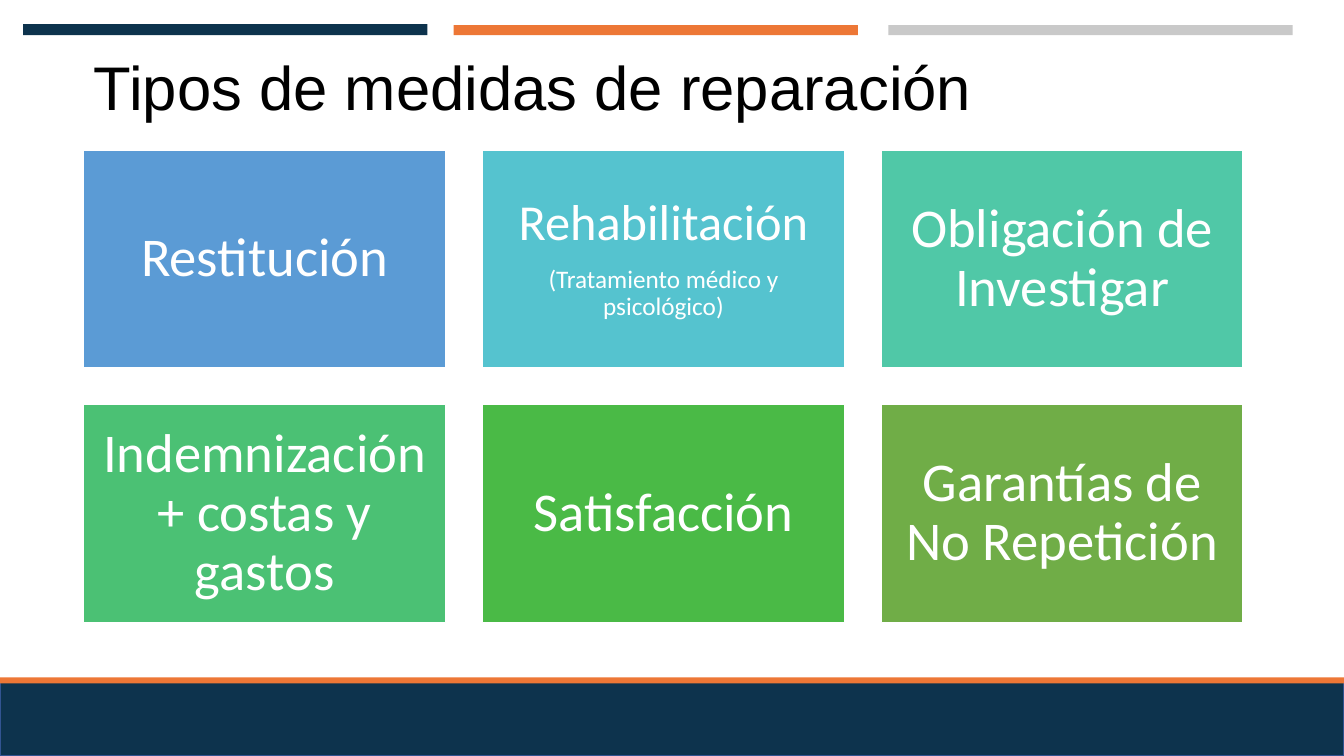
from pptx import Presentation
from pptx.dml.color import RGBColor
from pptx.enum.shapes import MSO_SHAPE
from pptx.enum.text import MSO_ANCHOR, MSO_AUTO_SIZE, PP_ALIGN
from pptx.util import Inches, Pt

RECTANGLE = MSO_SHAPE.RECTANGLE
MIDDLE = MSO_ANCHOR.MIDDLE
NO_AUTOFIT = MSO_AUTO_SIZE.NONE
LEFT, CENTER = PP_ALIGN.LEFT, PP_ALIGN.CENTER

BLACK = RGBColor(0x00, 0x00, 0x00)
WHITE = RGBColor(0xFF, 0xFF, 0xFF)
NAVY = RGBColor(0x0D, 0x33, 0x4D)
ORANGE = RGBColor(0xED, 0x77, 0x36)
GRAY = RGBColor(0xC9, 0xC9, 0xC9)
FOOTER_LINE = RGBColor(0x32, 0x54, 0x91)
BLUE = RGBColor(0x5B, 0x9B, 0xD5)
CYAN = RGBColor(0x55, 0xC3, 0xCF)
TURQUOISE = RGBColor(0x50, 0xC8, 0xA7)
MINT = RGBColor(0x4B, 0xC1, 0x74)
GREEN = RGBColor(0x4A, 0xBA, 0x46)
OLIVE = RGBColor(0x70, 0xAD, 0x47)

TOP_BARS = [
    (0.23, 0.24, 0.11, NAVY),
    (4.5, 0.25, 0.1, ORANGE),
    (8.81, 0.25, 0.1, GRAY),
]
MEASURES = [
    (BLUE, 0.16, [("Restitución", 39)]),
    (CYAN, 0.15, [("Rehabilitación", 36), ("(Tratamiento médico y psicológico)", 18)]),
    (TURQUOISE, 0.16, [("Obligación de Investigar", 39)]),
    (MINT, 0.16, [("Indemnización + costas y gastos", 39)]),
    (GREEN, 0.16, [("Satisfacción", 39)]),
    (OLIVE, 0.16, [("Garantías de No Repetición", 39)]),
]
COLUMNS = 3
GRID_LEFT, GRID_TOP, GRID_WIDTH = 0.83, 1.49, 11.5
CARD_WIDTH, CARD_HEIGHT = 3.59, 2.16
GAP = (GRID_WIDTH - COLUMNS * CARD_WIDTH) / (COLUMNS - 1)


def apply_format(target, values):
    """Set each named attribute of the target."""
    for name, value in values.items():
        setattr(target, name, value)


class SlideBuilder:
    """Hold the style and the current slide."""

    paragraph_format = {"line_spacing": 0.9, "space_before": Pt(0)}
    frame_format = {"word_wrap": True, "auto_size": NO_AUTOFIT, "vertical_anchor": MIDDLE}

    def __init__(self, slide):
        """Keep the slide to draw on."""
        self.slide = slide

    def fill_text(self, frame, lines, font, color, alignment):
        """Put sized lines into a text frame as paragraphs."""
        apply_format(frame, self.frame_format)
        for index, (text, size) in enumerate(lines):
            paragraph = frame.paragraphs[0] if index == 0 else frame.add_paragraph()
            is_last = index == len(lines) - 1
            apply_format(paragraph, self.paragraph_format)
            apply_format(paragraph, {"alignment": alignment,
                                     "space_after": Pt(0 if is_last else 10.5)})
            run = paragraph.add_run()
            run.text = text
            apply_format(run.font, {"name": font, "size": Pt(size)})
            run.font.color.rgb = color

    def title(self, text, left, top, width, height):
        """Place and fill the title placeholder."""
        title = self.slide.shapes.title
        apply_format(title, {"left": Inches(left), "top": Inches(top),
                             "width": Inches(width), "height": Inches(height)})
        self.fill_text(title.text_frame, [(text, 44)], "Arial", BLACK, LEFT)

    def rectangle(self, left, top, width, height, fill, line=None):
        """Draw a filled rectangle with an optional outline."""
        shape = self.slide.shapes.add_shape(
            RECTANGLE, Inches(left), Inches(top), Inches(width), Inches(height))
        shape.shadow.inherit = False
        shape.fill.solid()
        shape.fill.fore_color.rgb = fill
        if line is None:
            shape.line.fill.background()
        else:
            shape.line.color.rgb = line
            shape.line.width = Pt(1)
        return shape

    def card(self, left, top, fill, inset, lines):
        """Draw a coloured card with centred text."""
        shape = self.rectangle(left, top, CARD_WIDTH, CARD_HEIGHT, fill, WHITE)
        sides = ("margin_left", "margin_top", "margin_right", "margin_bottom")
        apply_format(shape.text_frame, {side: Inches(inset) for side in sides})
        self.fill_text(shape.text_frame, lines, "Calibri", WHITE, CENTER)


def main():
    """Build and save the presentation."""
    presentation = Presentation()
    apply_format(presentation, {"slide_width": Inches(13.33), "slide_height": Inches(7.5)})
    builder = SlideBuilder(presentation.slides.add_slide(presentation.slide_layouts[5]))

    builder.title("Tipos de medidas de reparación", GRID_LEFT, 0.43, GRID_WIDTH, 0.94)
    for left, top, height, color in TOP_BARS:
        builder.rectangle(left, top, 4.01, height, color)
    builder.rectangle(0, 6.77, 13.33, 0.73, NAVY, FOOTER_LINE)
    builder.rectangle(0, 6.72, 13.33, 0.06, ORANGE)

    for index, (color, inset, lines) in enumerate(MEASURES):
        row, column = divmod(index, COLUMNS)
        builder.card(GRID_LEFT + column * (CARD_WIDTH + GAP),
                     GRID_TOP + row * (CARD_HEIGHT + GAP), color, inset, lines)

    presentation.save("out.pptx")


if __name__ == "__main__":
    main()
